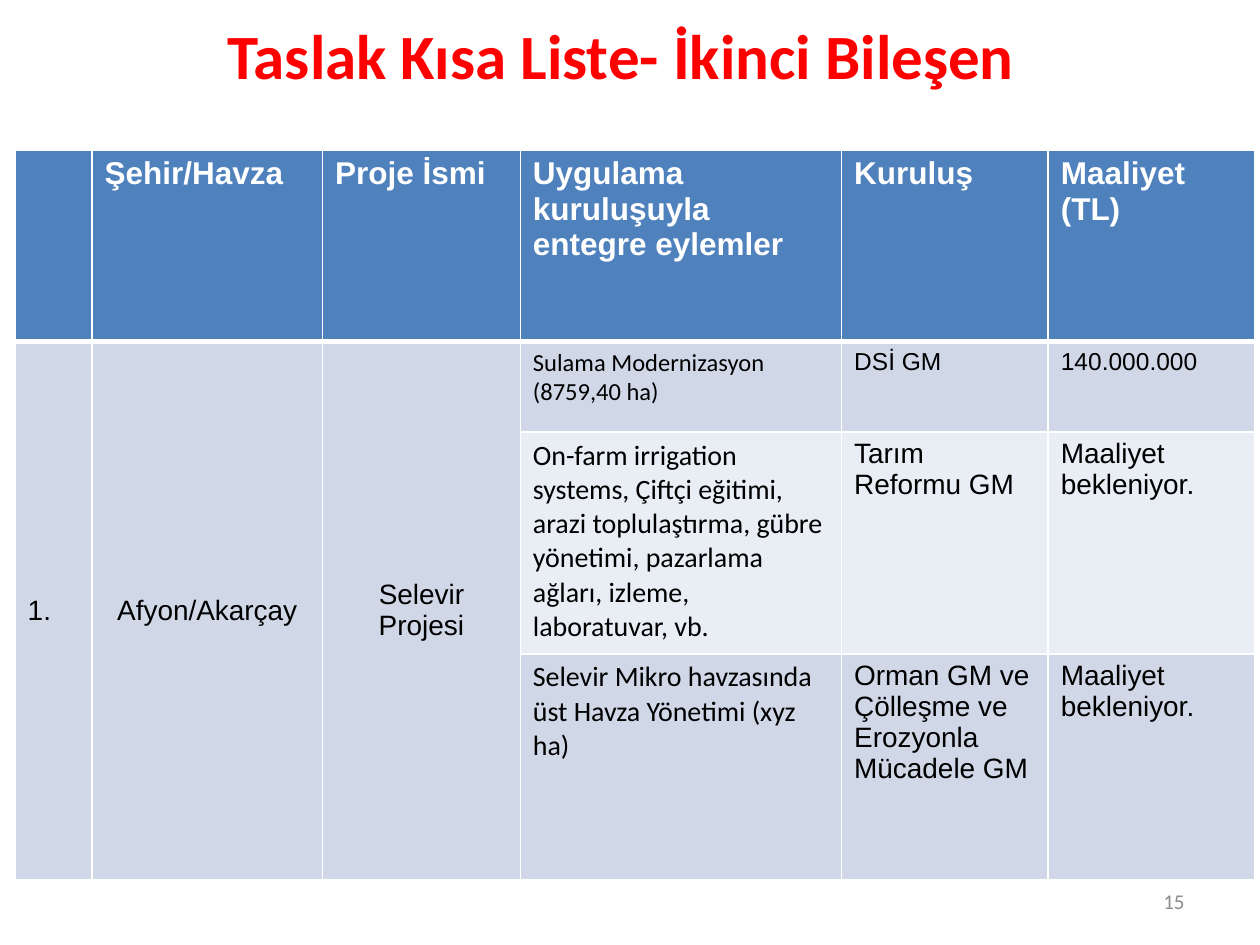
from lxml.etree import SubElement
from pptx import Presentation
from pptx.dml.color import RGBColor
from pptx.enum.text import MSO_ANCHOR, PP_ALIGN
from pptx.oxml.ns import qn
from pptx.util import Inches, Pt

HEADERS = ["", "Şehir/Havza", "Proje İsmi", "Uygulama kuruluşuyla entegre eylemler",
           "Kuruluş", "Maaliyet (TL)"]
PROJECT = ["1.", "Afyon/Akarçay", "Selevir Projesi"]
ACTIONS = [
    ("Sulama Modernizasyon (8759,40 ha)", "DSİ GM", "140.000.000"),
    ("On-farm irrigation systems, Çiftçi eğitimi, arazi toplulaştırma, gübre yönetimi, "
     "pazarlama ağları, izleme, laboratuvar, vb.", "Tarım Reformu GM", "Maaliyet bekleniyor."),
    ("Selevir Mikro havzasında üst Havza Yönetimi (xyz ha)",
     "Orman GM ve Çölleşme ve Erozyonla Mücadele GM", "Maaliyet bekleniyor."),
]
COLUMN_WIDTHS = [0.61, 1.83, 1.57, 2.55, 1.64, 1.64]
ROW_HEIGHTS = [1.52, 0.72, 1.76, 1.79]


def color(hex_string):
    return RGBColor.from_string(hex_string)


def write(frame, text, size=16, font="Arial", ink="000000", bold=False,
          align=PP_ALIGN.LEFT, anchor=MSO_ANCHOR.TOP):
    frame.word_wrap = True
    frame.vertical_anchor = anchor
    paragraph = frame.paragraphs[0]
    paragraph.alignment = align
    run = paragraph.add_run()
    run.text = text
    run.font.size = Pt(size)
    run.font.name = font
    run.font.bold = bold
    run.font.color.rgb = color(ink)


class SlideBuilder:
    HEADER_FILL = "4F81BD"
    BAND_FILLS = ["E9EDF4", "D0D8E8"]
    BORDER = "FFFFFF"

    def __init__(self, slide):
        self.slide = slide

    def title(self, text, left, top, width, height):
        shape = self.slide.shapes.title
        shape.left, shape.top = Inches(left), Inches(top)
        shape.width, shape.height = Inches(width), Inches(height)
        write(shape.text_frame, text, size=36, font="Calibri", ink="FF0000", bold=True,
              align=PP_ALIGN.CENTER, anchor=MSO_ANCHOR.MIDDLE)

    def page_number(self, text, left, top, width, height):
        shape = self.slide.shapes.add_textbox(Inches(left), Inches(top),
                                              Inches(width), Inches(height))
        write(shape.text_frame, text, size=12, font="Calibri", ink="8C8C8C",
              align=PP_ALIGN.RIGHT, anchor=MSO_ANCHOR.MIDDLE)

    def table(self, left, top, widths, heights):
        frame = self.slide.shapes.add_table(len(heights), len(widths), Inches(left), Inches(top),
                                            Inches(sum(widths)), Inches(sum(heights)))
        table = frame.table
        for column, width in zip(table.columns, widths):
            column.width = Inches(width)
        for row, height in zip(table.rows, heights):
            row.height = Inches(height)
        for row in range(len(heights)):
            for column in range(len(widths)):
                self.style_cell(table.cell(row, column), row)
        return table

    def style_cell(self, cell, row):
        # Borders come before the fill in the cell properties
        properties = cell._tc.get_or_add_tcPr()
        top, bottom = {0: (1, 3), 1: (3, 1)}.get(row, (1, 1))
        for side, points in (("L", 1), ("R", 1), ("T", top), ("B", bottom)):
            line = SubElement(properties, qn(f"a:ln{side}"), w=str(Pt(points)))
            fill = SubElement(line, qn("a:solidFill"))
            SubElement(fill, qn("a:srgbClr"), val=self.BORDER)
        cell.fill.solid()
        cell.fill.fore_color.rgb = color(self.BAND_FILLS[row % 2] if row else self.HEADER_FILL)


def write_cell(cell, text, anchor=MSO_ANCHOR.TOP, **style):
    write(cell.text_frame, text, **style)
    cell.vertical_anchor = anchor


def main():
    presentation = Presentation()
    presentation.slide_width, presentation.slide_height = Inches(10), Inches(7.5)
    builder = SlideBuilder(presentation.slides.add_slide(presentation.slide_layouts[5]))

    # Title and page number
    builder.title("Taslak Kısa Liste- İkinci Bileşen", 0.43, -0.19, 9, 1.25)
    builder.page_number("15", 7.17, 6.95, 2.33, 0.4)

    # Table header
    table = builder.table(0.12, 1.19, COLUMN_WIDTHS, ROW_HEIGHTS)
    for column, text in enumerate(HEADERS):
        if text:
            write_cell(table.cell(0, column), text, size=18, ink="FFFFFF", bold=True)

    # Project cells span all of its actions
    for column, text in enumerate(PROJECT):
        cell = table.cell(1, column)
        cell.merge(table.cell(len(ACTIONS), column))
        write_cell(cell, text, anchor=MSO_ANCHOR.MIDDLE,
                   align=PP_ALIGN.CENTER if column else PP_ALIGN.LEFT)

    # Action, institution and cost
    for row, texts in enumerate(ACTIONS, start=1):
        for column, text in enumerate(texts, start=len(PROJECT)):
            write_cell(table.cell(row, column), text, size=14 if row == 1 else 16,
                       font="Calibri" if column == len(PROJECT) else "Arial")

    presentation.save("out.pptx")


if __name__ == "__main__":
    main()
